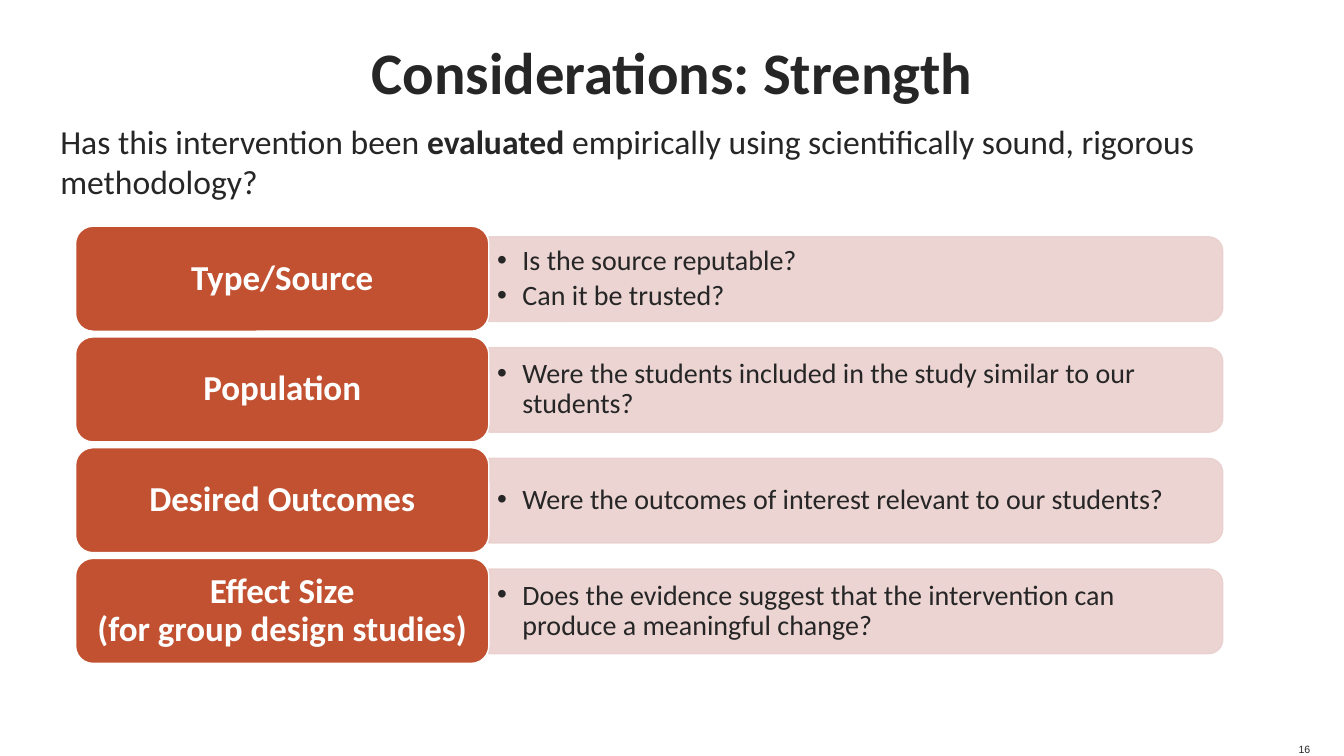
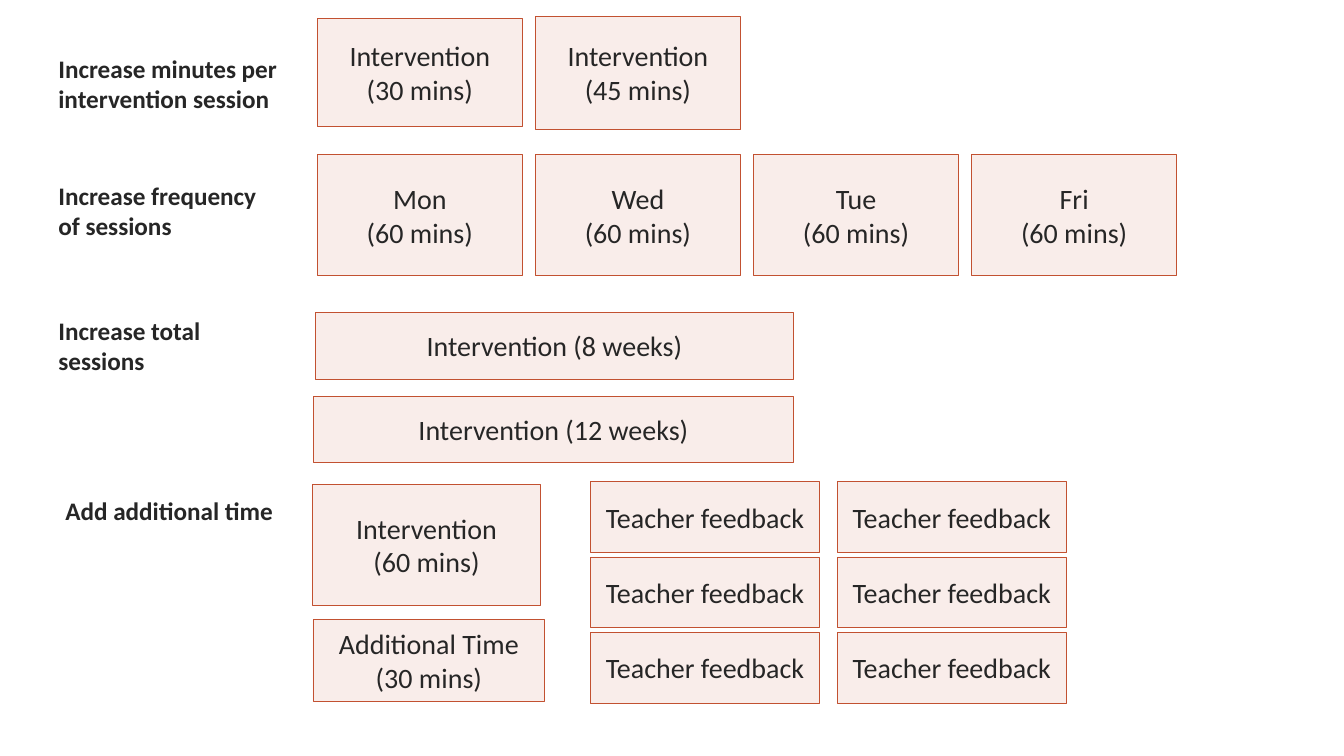
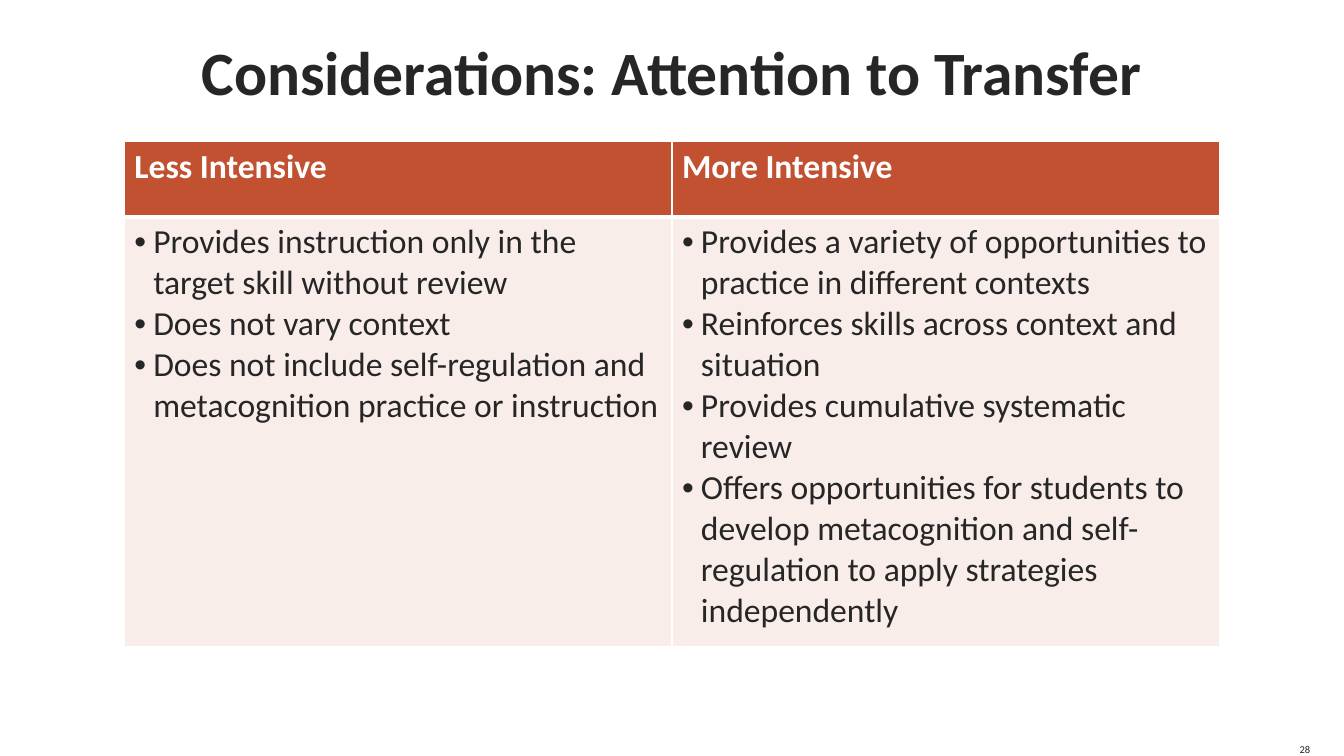
from dataclasses import dataclass

from pptx import Presentation
from pptx.dml.color import RGBColor
from pptx.enum.shapes import MSO_SHAPE as Preset
from pptx.enum.text import MSO_ANCHOR as Anchor, PP_ALIGN as Align
from pptx.oxml import parse_xml
from pptx.oxml.ns import nsdecls, qn
from pptx.oxml.xmlchemy import OxmlElement
from pptx.util import Pt


@dataclass(frozen=True)
class Theme:
    ink: str = "262626"
    accent: str = "C25131"
    rose: str = "E9D0CE"
    blush: str = "F9EDEA"
    white: str = "FFFFFF"
    font: str = "Calibri"
    number_font: str = "Arial"
    title: float = 42
    wide_title: float = 44
    body: float = 24
    topic: float = 25
    small: float = 20
    label: float = 18
    number: float = 7.5


THEME = Theme()
CELL_INSETS = (7.2, 3.6)


class Deck:
    """Builds slides in one theme, all lengths in points."""

    def __init__(self, theme):
        self.theme = theme
        self.file = Presentation()
        self.file.slide_width, self.file.slide_height = Pt(960), Pt(540)
        self.slide = None

    def new_slide(self):
        self.slide = self.file.slides.add_slide(self.file.slide_layouts[6])

    def fill_text(self, frame, paragraphs, size, color=None, bold=False, align=Align.LEFT,
                  font=None, bullet_indent=0, line_spacing=None, space_after=None):
        for index, runs in enumerate(paragraphs):
            paragraph = frame.paragraphs[0] if index == 0 else frame.add_paragraph()
            paragraph.alignment = align
            if line_spacing:
                paragraph.line_spacing = line_spacing
            if space_after:
                paragraph.space_after = Pt(space_after)
            if bullet_indent:
                self.bullet(paragraph, bullet_indent)
            for text, emphasis in [(runs, bold)] if isinstance(runs, str) else runs:
                run = paragraph.add_run()
                run.text = text
                run.font.name = font or self.theme.font
                run.font.size = Pt(size)
                run.font.bold = emphasis
                run.font.color.rgb = RGBColor.from_string(color or self.theme.ink)

    def bullet(self, paragraph, indent):
        properties = paragraph._p.get_or_add_pPr()
        properties.set("marL", str(Pt(indent)))
        properties.set("indent", str(-Pt(indent)))
        for tag, key, value in (("a:buFont", "typeface", "Arial"), ("a:buChar", "char", "•")):
            mark = OxmlElement(tag)
            mark.set(key, value)
            properties.append(mark)

    def frame(self, shape, anchor, insets, wrap=True):
        frame = shape.text_frame
        frame.word_wrap = wrap
        frame.vertical_anchor = anchor
        frame.margin_left = frame.margin_right = Pt(insets[0])
        frame.margin_top = frame.margin_bottom = Pt(insets[1])
        return frame

    def text(self, box, paragraphs, size, anchor=Anchor.TOP, insets=CELL_INSETS,
             wrap=True, **style):
        shape = self.slide.shapes.add_textbox(*map(Pt, box))
        self.fill_text(self.frame(shape, anchor, insets, wrap), paragraphs, size, **style)

    def shape(self, preset, box, fill, line, weight):
        shape = self.slide.shapes.add_shape(preset, *map(Pt, box))
        shape.shadow.inherit = False
        shape.fill.solid()
        shape.fill.fore_color.rgb = RGBColor.from_string(fill)
        shape.line.color.rgb = RGBColor.from_string(line)
        shape.line.width = Pt(weight)
        return shape

    def title(self, text, size):
        self.text((36, 0, 888, 100.8), [text], size, Anchor.MIDDLE, (0, 0),
                  bold=True, align=Align.CENTER)

    def page_number(self, number, font):
        self.text((923.8, 527.8, 12.2, 12.2), [number], self.theme.number, Anchor.BOTTOM,
                  (0, 0), wrap=False, align=Align.RIGHT, font=font)

    def answer_bar(self, left, top, width, height):
        turned = (left + (width - height) / 2, top + (height - width) / 2, height, width)
        bar = self.shape(Preset.ROUND_2_SAME_RECTANGLE, turned,
                         self.theme.rose, self.theme.rose, 1)
        bar.rotation = 90
        for color in bar.element.spPr.iter(qn("a:srgbClr")):
            alpha = OxmlElement("a:alpha")
            alpha.set("val", "90000")
            color.append(alpha)

    def topic_row(self, top, topic, questions):
        self.answer_bar(349.2, top + 7.6, 524.2, 60.4)
        self.text((349.2, top + 10.6, 521.3, 54), questions, self.theme.small, Anchor.MIDDLE,
                  (6, 3), bullet_indent=18, line_spacing=0.9, space_after=3)
        label = self.shape(Preset.ROUNDED_RECTANGLE, (54, top, 295.2, 75),
                           self.theme.accent, self.theme.white, 1)
        self.fill_text(self.frame(label, Anchor.MIDDLE, CELL_INSETS), topic, self.theme.topic,
                       self.theme.white, True, Align.CENTER, line_spacing=0.9)

    def row_label(self, left, top, text):
        self.text((left, top, 172, 51), [text], self.theme.label, bold=True)

    def session(self, box, *lines):
        card = self.shape(Preset.RECTANGLE, box, self.theme.blush, self.theme.accent, 0.5)
        self.fill_text(self.frame(card, Anchor.MIDDLE, CELL_INSETS), lines,
                       self.theme.small, align=Align.CENTER)

    def cell(self, cell, paragraphs, fill, borders, **style):
        cell.fill.solid()
        cell.fill.fore_color.rgb = RGBColor.from_string(fill)
        properties = cell._tc.get_or_add_tcPr()
        for index, (side, weight) in enumerate(zip("LRTB", borders)):
            properties.insert(index, parse_xml(
                f'<a:ln{side} {nsdecls("a")} w="{Pt(weight)}"><a:solidFill>'
                f'<a:srgbClr val="{self.theme.white}"/></a:solidFill></a:ln{side}>'))
        self.fill_text(cell.text_frame, paragraphs, self.theme.body, **style)

    def comparison(self, box, row_heights, columns):
        table = self.slide.shapes.add_table(2, len(columns), *map(Pt, box)).table
        table.horz_banding = False
        for row, height in zip(table.rows, row_heights):
            row.height = Pt(height)
        for index, (heading, points) in enumerate(columns):
            table.columns[index].width = Pt(box[2] / len(columns))
            self.cell(table.cell(0, index), [heading], self.theme.accent, (1, 1, 1, 3),
                      color=self.theme.white, bold=True)
            self.cell(table.cell(1, index), points, self.theme.blush, (1, 1, 3, 1),
                      bullet_indent=13.5)


def strength(deck):
    deck.new_slide()
    deck.title("Considerations: Strength", THEME.title)
    question = [("Has this intervention been ", False), ("evaluated", True),
                (" empirically using scientifically sound, rigorous methodology?", False)]
    deck.text((36, 82.8, 888, 87), [question], THEME.body)
    topics = (
        (["Type/Source"], ["Is the source reputable?", "Can it be trusted?"]),
        (["Population"],
         ["Were the students included in the study similar to our students?"]),
        (["Desired Outcomes"], ["Were the outcomes of interest relevant to our students?"]),
        (["Effect Size", "(for group design studies)"],
         ["Does the evidence suggest that the intervention can produce a meaningful change?"]),
    )
    for index, (topic, questions) in enumerate(topics):
        deck.topic_row(161.6 + 79.1 * index, topic, questions)
    deck.page_number("16", THEME.number_font)


def added_time(deck):
    deck.new_slide()
    first_column, column_step, card_width = 226.8, 155.8, 146.2
    for left, top, text in (
        (34.6, 34.6, "Increase minutes per intervention session"),
        (34.6, 125.3, "Increase frequency of sessions"),
        (34.6, 221.8, "Increase total sessions"),
        (39.6, 350.6, "Add additional time"),
    ):
        deck.row_label(left, top, text)
    for index, (minutes, top, height) in enumerate(((30, 13, 77), (45, 11.5, 80.6))):
        deck.session((first_column + column_step * index, top, card_width, height),
                     "Intervention", f"({minutes} mins)")
    for index, day in enumerate(("Mon", "Wed", "Tue", "Fri")):
        deck.session((first_column + column_step * index, 110.5, card_width, 86.5),
                     day, "(60 mins)")
    deck.session((225.4, 223.2, 341.3, 47.5), "Intervention (8 weeks)")
    deck.session((224, 283, 342.7, 47.5), "Intervention (12 weeks)")
    deck.session((223.2, 345.8, 163, 86.5), "Intervention", "(60 mins)")
    deck.session((223.6, 442.6, 165.6, 58.5), "Additional Time", "(30 mins)")
    for column in range(2):
        for row in range(3):
            deck.session((422 + 176.2 * column, 344 + 53.8 * row, 163.4, 50.6),
                         "Teacher feedback")


def transfer(deck):
    deck.new_slide()
    deck.title("Considerations: Attention to Transfer", THEME.wide_title)
    deck.comparison((88.8, 100.8, 782.4, 361.4), (54, 307.4), (
        ("Less Intensive", [
            "Provides instruction only in the target skill without review",
            "Does not vary context",
            "Does not include self-regulation and metacognition practice or instruction",
        ]),
        ("More Intensive", [
            "Provides a variety of opportunities to practice in different contexts",
            "Reinforces skills across context and situation",
            "Provides cumulative systematic review",
            "Offers opportunities for students to develop metacognition and "
            "self-regulation to apply strategies independently",
        ]),
    ))
    deck.page_number("28", THEME.font)


def main():
    deck = Deck(THEME)
    for build in (strength, added_time, transfer):
        build(deck)
    deck.file.save("out.pptx")


if __name__ == "__main__":
    main()
